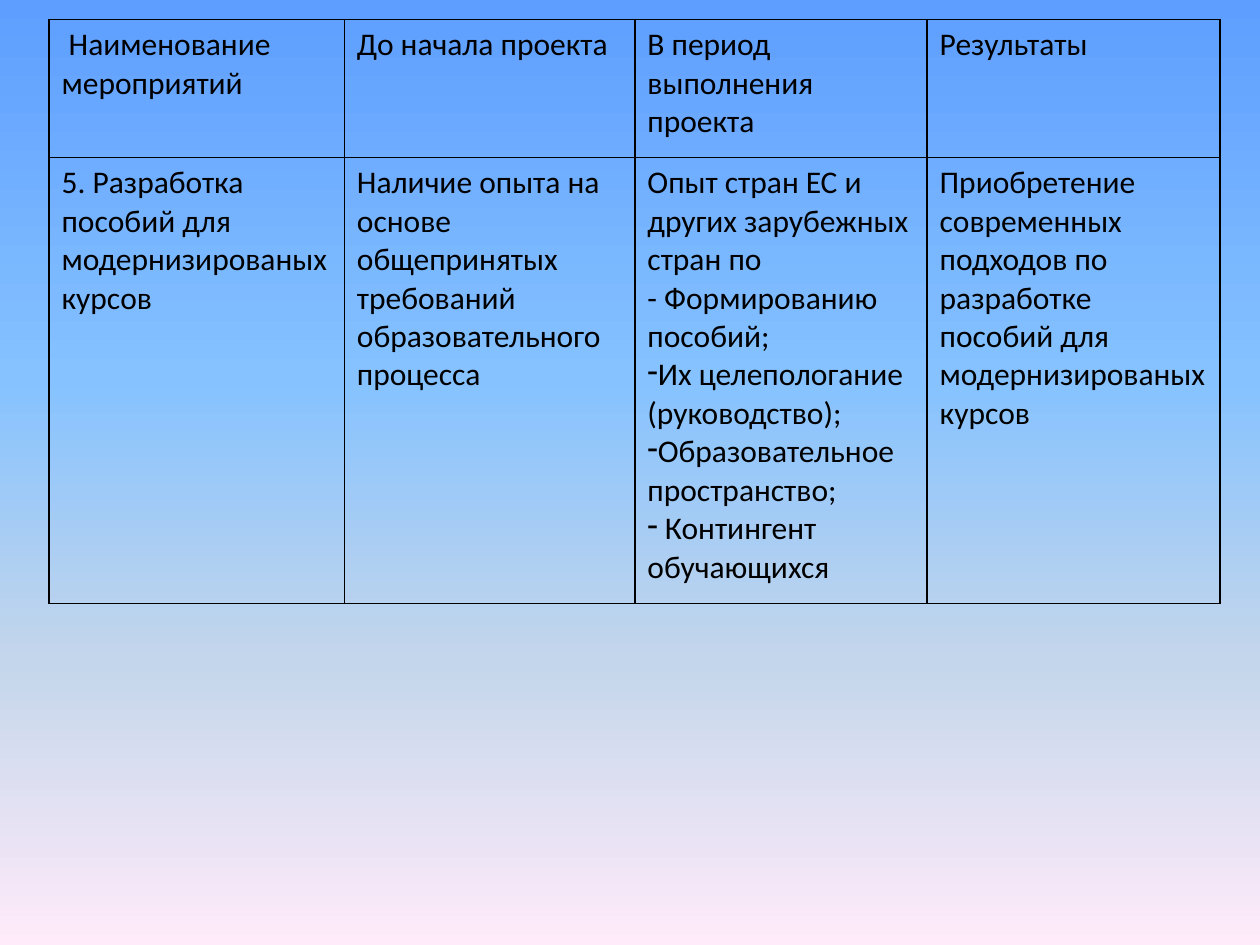
from lxml import etree
from pptx import Presentation
from pptx.dml.color import RGBColor
from pptx.oxml.ns import qn
from pptx.util import Pt

COLORS = {
    "text": "000000",
    "border": "000000",
    "sky_top": "5E9EFF",
    "sky_middle": "85C2FF",
    "haze": "C4D6EB",
    "pink_bottom": "FFEBFA",
}
BACKGROUND_STOPS = [(0, "sky_top"), (40, "sky_middle"), (70, "haze"), (100, "pink_bottom")]

FONT = "Calibri"
TEXT_SIZE = Pt(18)
BORDER_WIDTH = Pt(1)
COLUMN_WIDTHS = [Pt(168.8), Pt(166), Pt(167), Pt(167.4)]
ROW_HEIGHTS = [Pt(78.8), Pt(255)]
DASH = "•"  # marks a line that gets an automatic dash bullet

HEADINGS = [
    " Наименование мероприятий",
    "До начала проекта",
    "В период выполнения проекта",
    "Результаты",
]
MANUALS = [
    "5. Разработка пособий для модернизированых курсов",
    "Наличие опыта на основе общепринятых требований образовательного процесса",
    "Опыт стран ЕС и других зарубежных стран по\n"
    "- Формированию пособий;\n"
    "•Их целепологание\n"
    "(руководство);\n"
    "•Образовательное пространство;\n"
    "• Контингент обучающихся",
    "Приобретение современных подходов по разработке пособий для модернизированых курсов",
]


def add_color(parent, name):
    etree.SubElement(parent, qn("a:srgbClr"), val=COLORS[name])


def paint_background(slide):
    fill = slide.background.fill
    fill.gradient()
    fill.gradient_angle = 270
    stops = next(slide.element.iter(qn("a:gsLst")))
    for stop in list(stops):
        stops.remove(stop)
    for percent, name in BACKGROUND_STOPS:
        add_color(etree.SubElement(stops, qn("a:gs"), pos=str(percent * 1000)), name)


def add_borders(cell):
    properties = cell._tc.get_or_add_tcPr()
    for position, side in enumerate(("a:lnL", "a:lnR", "a:lnT", "a:lnB")):
        line = etree.Element(qn(side), w=str(BORDER_WIDTH))
        add_color(etree.SubElement(line, qn("a:solidFill")), "border")
        properties.insert(position, line)


def add_dash(paragraph):
    properties = paragraph._p.get_or_add_pPr()
    properties.set("marL", "0")
    properties.set("indent", "0")
    etree.SubElement(properties, qn("a:buFontTx"))
    etree.SubElement(properties, qn("a:buChar"), char="-")


def fill_cell(cell, text):
    cell.fill.background()
    add_borders(cell)
    lines = text.split("\n")
    cell.text_frame.text = "\n".join(line.removeprefix(DASH) for line in lines)
    for paragraph, line in zip(cell.text_frame.paragraphs, lines):
        if line.startswith(DASH):
            add_dash(paragraph)
        for run in paragraph.runs:
            run.font.name = FONT
            run.font.size = TEXT_SIZE
            run.font.bold = False
            run.font.color.rgb = RGBColor.from_string(COLORS["text"])


def add_activities(slide, rows):
    frame = slide.shapes.add_table(
        len(rows), len(COLUMN_WIDTHS), Pt(28), Pt(11.2), sum(COLUMN_WIDTHS), sum(ROW_HEIGHTS)
    )
    activities = frame.table
    activities.first_row = False
    activities.horz_banding = False
    for column, width in zip(activities.columns, COLUMN_WIDTHS):
        column.width = width
    for row, height, texts in zip(activities.rows, ROW_HEIGHTS, rows):
        row.height = height
        for cell, text in zip(row.cells, texts):
            fill_cell(cell, text)


def main():
    presentation = Presentation()
    presentation.slide_width, presentation.slide_height = Pt(720), Pt(540)
    slide = presentation.slides.add_slide(presentation.slide_layouts[6])

    # Sky-to-pink backdrop
    paint_background(slide)

    # Activities before, during and after the project
    add_activities(slide, [HEADINGS, MANUALS])

    presentation.save("out.pptx")


if __name__ == "__main__":
    main()
